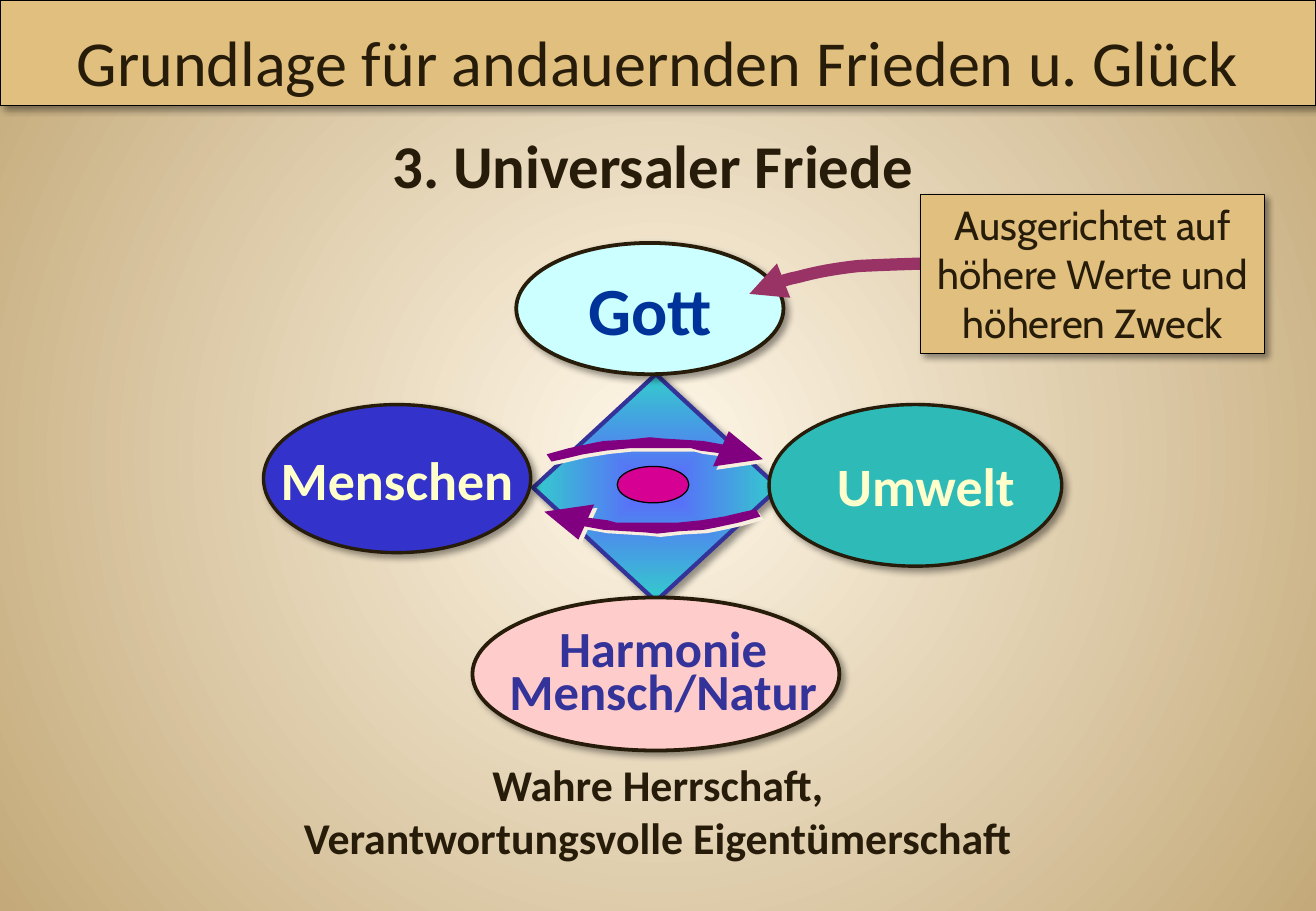
from dataclasses import dataclass
from typing import Optional

from lxml import etree
from pptx import Presentation
from pptx.dml.color import RGBColor
from pptx.enum.shapes import MSO_SHAPE
from pptx.enum.text import MSO_ANCHOR, PP_ALIGN
from pptx.oxml.ns import qn
from pptx.util import Pt

DIAMOND, OVAL, RECT = MSO_SHAPE.DIAMOND, MSO_SHAPE.OVAL, MSO_SHAPE.RECTANGLE
TOP, MIDDLE, BOTTOM = MSO_ANCHOR.TOP, MSO_ANCHOR.MIDDLE, MSO_ANCHOR.BOTTOM
CENTER = PP_ALIGN.CENTER

BROWN = RGBColor(0x26, 0x1C, 0x09)
BLACK = RGBColor(0x00, 0x00, 0x00)
IVORY = RGBColor(0xFF, 0xF7, 0xE8)
SAND = RGBColor(0xC4, 0xAA, 0x7A)
GOLD = RGBColor(0xE1, 0xBF, 0x7E)
CREAM = RGBColor(0xF7, 0xEE, 0xDD)
YELLOW = RGBColor(0xFF, 0xFF, 0xCC)
BLUE = RGBColor(0x33, 0x33, 0xCC)
NAVY = RGBColor(0x00, 0x33, 0x99)
INDIGO = RGBColor(0x33, 0x33, 0x99)
VIOLET = RGBColor(0x5D, 0x64, 0xFF)
CYAN = RGBColor(0x33, 0xCC, 0xCC)
TEAL = RGBColor(0x2E, 0xBB, 0xB8)
PALE_CYAN = RGBColor(0xCC, 0xFF, 0xFF)
PINK = RGBColor(0xFF, 0xCC, 0xCC)
MAGENTA = RGBColor(0xD6, 0x00, 0x93)
PURPLE = RGBColor(0x80, 0x00, 0x80)
PLUM = RGBColor(0x99, 0x33, 0x66)

Point = tuple[float, float]


@dataclass
class Label:
    lines: list[str]
    size: float
    color: RGBColor = BROWN
    bold: bool = True
    font: str = "Calibri"
    anchor: MSO_ANCHOR = TOP
    wrap: bool = True
    spacing: Optional[float] = None
    indent: float = 0


@dataclass
class Item:
    box: tuple[float, float, float, float]
    label: Optional[Label] = None
    shape: Optional[MSO_SHAPE] = None  # None gives a plain text box
    fill: Optional[RGBColor] = None
    fill_edge: Optional[RGBColor] = None  # outer colour of a gradient
    line: RGBColor = BROWN
    width: float = 2
    shadow: bool = True


def radial(fill, element, inner: RGBColor, outer: RGBColor, kind: str) -> None:
    fill.gradient()
    for stop, color in zip(fill.gradient_stops, (inner, outer)):
        stop.color.rgb = color
    grad = element.find(".//" + qn("a:gradFill"))
    grad.remove(grad.find(qn("a:lin")))
    path = etree.SubElement(grad, qn("a:path"), path=kind)
    etree.SubElement(path, qn("a:fillToRect"), l="50000", t="50000", r="50000", b="50000")


def add_shadow(sp, color: RGBColor, alpha: int, blur: float, dist: float) -> None:
    effects = sp.element.spPr.find(qn("a:effectLst"))
    shadow = etree.SubElement(effects, qn("a:outerShdw"), blurRad=str(Pt(blur)),
                              dist=str(Pt(dist)), dir="2700000", algn="ctr", rotWithShape="0")
    clr = etree.SubElement(shadow, qn("a:srgbClr"), val=str(color))
    etree.SubElement(clr, qn("a:alpha"), val=str(alpha * 1000))


def write(sp, label: Label) -> None:
    tf = sp.text_frame
    tf.word_wrap = label.wrap
    tf.vertical_anchor = label.anchor
    tf.margin_left = Pt(7.2 + label.indent)
    for i, line in enumerate(label.lines):
        p = tf.add_paragraph() if i else tf.paragraphs[0]
        p.alignment = CENTER
        if label.spacing:
            p.line_spacing = label.spacing
        r = p.add_run()
        r.text = line
        r.font.name = label.font
        r.font.size = Pt(label.size)
        r.font.bold = label.bold
        r.font.color.rgb = label.color


def draw(s, item: Item) -> None:
    box = [Pt(v) for v in item.box]
    if item.shape is None:
        sp = s.shapes.add_textbox(*box)
    else:
        sp = s.shapes.add_shape(item.shape, *box)
        sp.shadow.inherit = False
        if item.fill_edge:
            radial(sp.fill, sp.element, item.fill, item.fill_edge, "shape")
        else:
            sp.fill.solid()
            sp.fill.fore_color.rgb = item.fill
        sp.line.color.rgb = item.line
        sp.line.width = Pt(item.width)
        if item.shadow:
            add_shadow(sp, BLACK, 40, 4, 3)
    if item.label:
        write(sp, item.label)


def outline(s, points: list[Point], close: bool):
    fb = s.shapes.build_freeform(Pt(points[0][0]), Pt(points[0][1]))
    fb.add_line_segments([(Pt(x), Pt(y)) for x, y in points[1:]], close=close)
    sp = fb.convert_to_shape()
    sp.shadow.inherit = False
    return sp


def swing_arrow(s, points: list[Point]) -> None:
    sp = outline(s, points, True)
    sp.fill.solid()
    sp.fill.fore_color.rgb = PURPLE
    sp.line.fill.background()
    add_shadow(sp, CREAM, 100, 0, 2.8)


def bezier(a: Point, b: Point, c: Point, d: Point, steps: int = 8) -> list[Point]:
    def at(t: float) -> Point:
        u = 1 - t
        return tuple(u**3 * i + 3 * u * u * t * j + 3 * u * t * t * k + t**3 * m
                     for i, j, k, m in zip(a, b, c, d))
    return [at(n / steps) for n in range(steps + 1)]


def pointer(s, points: list[Point]) -> None:
    sp = outline(s, points, False)
    sp.fill.background()
    sp.line.color.rgb = PLUM
    sp.line.width = Pt(7.25)
    etree.SubElement(sp.element.spPr.find(qn("a:ln")), qn("a:headEnd"), type="triangle")


DIAGRAM = [
    Item((0, 445.7, 780, 70.6),
         Label(["Wahre Herrschaft,", "Verantwortungsvolle Eigentümerschaft"], 26)),
    Item((316, 221.8, 145.5, 134.6), None, DIAMOND, VIOLET, CYAN, INDIGO, 2.5),
    Item((156.2, 239.8, 158.4, 87.8),
         Label(["Menschen"], 32, YELLOW, anchor=MIDDLE, wrap=False), OVAL, BLUE),
    Item((455.8, 239.8, 173.5, 95.8),
         Label(["Umwelt"], 32, YELLOW, anchor=MIDDLE, wrap=False, indent=12.4), OVAL, TEAL),
    Item((306, 144, 158.4, 77.8),
         Label(["Gott"], 40, NAVY, anchor=MIDDLE, wrap=False), OVAL, PALE_CYAN, width=2.25),
    Item((162, 72, 450, 51), Label(["3. Universaler Friede"], 36)),
    Item((280, 354.2, 217.5, 90.7), None, OVAL, PINK, width=2.25),
    Item((288, 372.2, 210.2, 58.3),
         Label(["Harmonie", "Mensch/Natur"], 30, INDIGO, spacing=0.7)),
    Item((365.8, 276.5, 42.5, 21.6), None, OVAL, MAGENTA, line=BLACK, width=0.75, shadow=False),
]
BANNER = Item((0, 0, 780, 62.6),
              Label(["Grundlage für andauernden Frieden u. Glück"], 38, bold=False, anchor=BOTTOM),
              RECT, GOLD, line=BLACK, width=0.75)
CALLOUT = Item((545.8, 115.2, 203.8, 94.3),
               Label(["Ausgerichtet auf höhere Werte und höheren Zweck"], 24, bold=False,
                     font="Cabin"),
               RECT, GOLD, line=BLACK, width=0.75)

UPPER_SWING = [
    (426.2, 268.6), (414.7, 267.1), (409.7, 265.7), (373, 265.7), (359.3, 267.1),
    (345.6, 269.3), (333.4, 272.2), (326.9, 273.6), (324, 269.3), (337, 265.7),
    (350.6, 262.8), (357.8, 261.4), (372.2, 260.6), (385.2, 259.2), (392.4, 259.9),
    (416.9, 261.4), (428.4, 263.5), (432, 255.6), (452.2, 272.2), (422.6, 276.5),
]
# The lower arrow is the upper one turned by half a circle
LOWER_SWING = [(774.8 - x, 575.5 - y) for x, y in UPPER_SWING]
POINTER = (bezier((444.2, 174.2), (453, 170.6), (462.2, 166.3), (473, 164.2))
           + bezier((473, 164.2), (483.8, 161.3), (495.4, 159.1), (509, 157.7))[1:]
           + bezier((509, 157.7), (522, 157), (545, 156.2), (552.2, 156.2))[1:])


def main() -> None:
    prs = Presentation()
    prs.slide_width, prs.slide_height = Pt(780), Pt(540)
    s = prs.slides.add_slide(prs.slide_layouts[6])
    radial(s.background.fill, s.element, IVORY, SAND, "circle")

    # Four positions around the diamond
    for item in DIAGRAM:
        draw(s, item)

    # Give and take
    for points in (UPPER_SWING, LOWER_SWING):
        swing_arrow(s, points)

    # Title and callout
    draw(s, BANNER)
    pointer(s, POINTER)
    draw(s, CALLOUT)
    prs.save("out.pptx")


if __name__ == "__main__":
    main()
